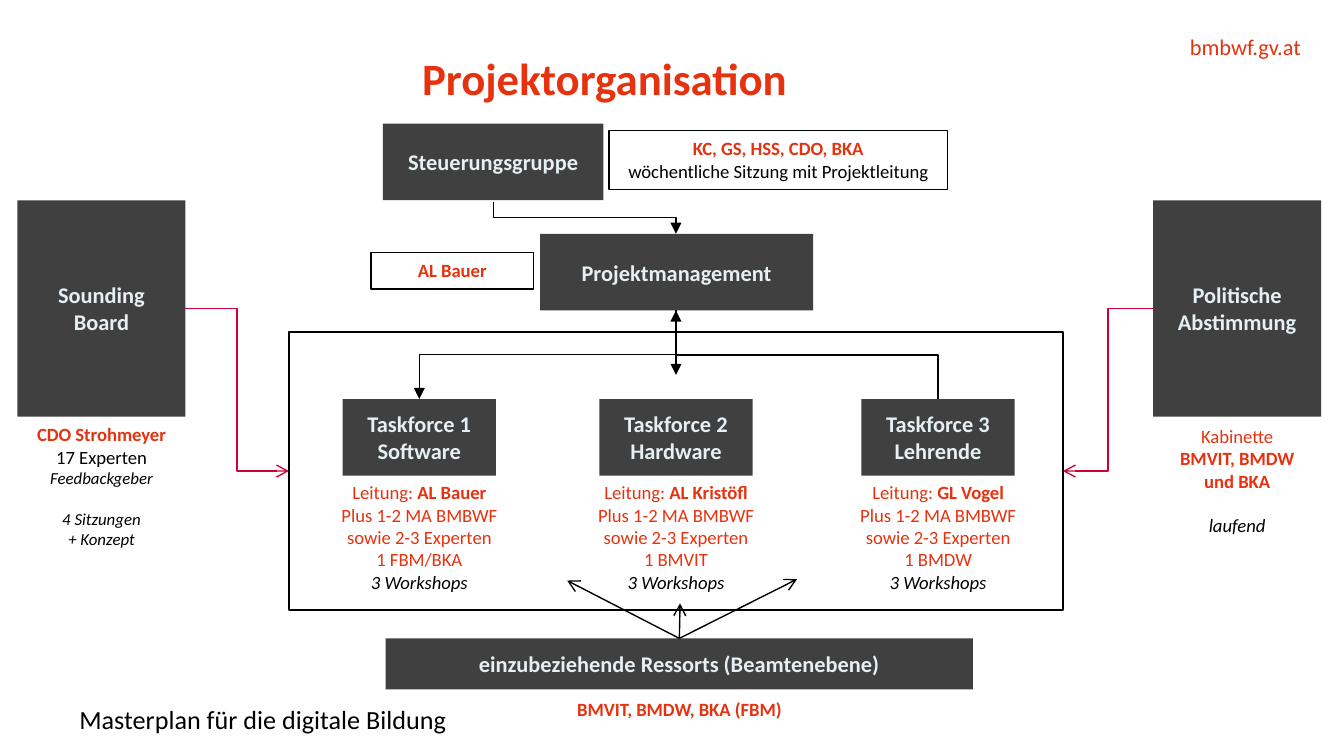
from lxml.etree import SubElement
from pptx import Presentation
from pptx.dml.color import RGBColor
from pptx.enum.shapes import MSO_CONNECTOR, MSO_SHAPE
from pptx.enum.text import MSO_ANCHOR, PP_ALIGN
from pptx.oxml.ns import qn
from pptx.util import Inches, Pt

HUES = {"red": "E6320F", "dark": "404040", "pale": "E6EFF3",
        "black": "000000", "wine": "CA0237"}

# Text styles: colour name and font values
STYLES = {
    "site": ("red", {"size": Pt(12)}),
    "title": ("red", {"size": Pt(24), "bold": True}),
    "foot": ("black", {"size": Pt(14)}),
    "box": ("pale", {"size": Pt(12), "bold": True}),
    "red": ("red", {"size": Pt(10)}),
    "bold": ("red", {"size": Pt(10), "bold": True}),
    "plain": ("black", {"size": Pt(10)}),
    "slant": ("black", {"size": Pt(10), "italic": True}),
    "small": ("black", {"size": Pt(9), "italic": True}),
}

# Content: a line is a list of (text, style) runs; a third value is space before
BOXES = {
    "steer": ((2.85, 0.92, 1.64, 0.57), ["Steuerungsgruppe"]),
    "manage": ((4.02, 1.74, 2.03, 0.57), ["Projektmanagement"]),
    "sound": ((0.13, 1.49, 1.25, 1.61), ["Sounding Board"]),
    "policy": ((8.58, 1.49, 1.25, 1.61), ["Politische Abstimmung"]),
    "depts": ((2.87, 4.75, 4.37, 0.38),
              ["einzubeziehende Ressorts (Beamtenebene)"]),
}
FRAMED = [
    ((2.76, 1.88, 1.21, 0.27), [[("AL Bauer", "bold")]]),
    ((4.53, 0.97, 2.52, 0.44), [
        [("KC, GS, HSS, CDO, BKA", "bold")],
        [("wöchentliche Sitzung mit Projektleitung", "plain")]]),
]
NOTES = [
    ((0.13, 3.1, 1.25, 1.06), [
        [("CDO Strohmeyer", "bold")], [("17 Experten", "plain")],
        [("Feedbackgeber", "small")], [("4 Sitzungen", "small", 11)],
        [("+ Konzept", "small")]]),
    ((8.58, 3.11, 1.25, 0.94), [
        [("Kabinette", "red")], [("BMVIT, BMDW und BKA", "bold")],
        [("laufend", "slant", 12)]]),
    ((2.87, 5.14, 4.37, 0.27), [[("BMVIT, BMDW, BKA (FBM)", "bold")]]),
]
TASKS = [  # centre, topic, lead, partner
    (3.12, "Software", "AL Bauer", "1 FBM/BKA"),
    (5.03, "Hardware", "AL Kristöfl", "1 BMVIT"),
    (6.98, "Lehrende", "GL Vogel", "1 BMDW"),
]
FRAME = (2.15, 2.47, 5.76, 2.07)
TASK_W, TASK_H, TASK_Y, NOTE_W = 1.14, 0.57, 2.97, 1.4
MID = 5.03
BENDS = [  # from, to
    ((3.67, 1.5), (MID, 1.74)),
    ((MID, 2.46), (MID, 2.79)),
    ((MID, 2.31), (3.12, TASK_Y)),
    ((6.98, TASK_Y), (MID, 2.31)),
]
RAYS = [(4.22, 4.32), (5.06, 4.49), (5.93, 4.31)]

# Slide in 16:9
deck = Presentation()
deck.slide_width = Inches(10)
deck.slide_height = Inches(10 * 9 / 16)
slide = deck.slides.add_slide(deck.slide_layouts[6])
shapes = slide.shapes


def hue(name):
    return RGBColor.from_string(HUES[name])


def write(shape, lines, align=PP_ALIGN.CENTER, anchor=MSO_ANCHOR.TOP,
          pad=None, wrap=True):
    frame = shape.text_frame
    frame.word_wrap, frame.vertical_anchor = wrap, anchor
    if pad is not None:
        for side in ("left", "right", "top", "bottom"):
            setattr(frame, f"margin_{side}", Inches(pad))
    for n, line in enumerate(lines):
        para = frame.add_paragraph() if n else frame.paragraphs[0]
        para.alignment = align
        for text, style, *gap in line:
            run = para.add_run()
            run.text = text
            tone, form = STYLES[style]
            for key, value in {"name": "Calibri", **form}.items():
                setattr(run.font, key, value)
            run.font.color.rgb = hue(tone)
            if gap:
                para.space_before = Pt(gap[0])
    return frame


def label(at, lines, **form):
    return write(shapes.add_textbox(*map(Inches, at)), lines, **form)


def block(at, fill=None, width=0.75):
    shape = shapes.add_shape(MSO_SHAPE.RECTANGLE, *map(Inches, at))
    shape.shadow.inherit = False
    if fill:
        shape.fill.solid()
        shape.fill.fore_color.rgb = hue(fill)
        shape.line.fill.background()
    else:
        shape.fill.background()
        shape.line.color.rgb = hue("black")
        shape.line.width = Pt(width)
    return shape


def dark(at, lines):
    shape = block(at, "dark")
    write(shape, [[(text, "box")] for text in lines], anchor=MSO_ANCHOR.MIDDLE)
    return shape


def arrow(kind, start, end, tone="black", head="arrow"):
    line = shapes.add_connector(kind, *map(Inches, (*start, *end)))
    line.line.color.rgb = hue(tone)
    line.line.width = Pt(0.75)
    SubElement(line.line._get_or_add_ln(), qn("a:tailEnd"), type=head)
    SubElement(line._element.spPr, qn("a:effectLst"))
    return line


def drop(start, end):
    """Elbow that leaves vertically: lay it flat, then turn it by 90 degrees."""
    (x1, y1), (x2, y2) = start, end
    cx, cy, dx, dy = (x1 + x2) / 2, (y1 + y2) / 2, x2 - x1, y2 - y1
    line = arrow(MSO_CONNECTOR.ELBOW, (cx - dy / 2, cy + dx / 2),
                 (cx + dy / 2, cy - dx / 2), head="triangle")
    line._element.spPr.find(qn("a:xfrm")).set("rot", str(90 * 60000))


# Header and footer
label((7.27, 0.25, 2.41, 0.2), [[("bmbwf.gv.at", "site")]],
      align=PP_ALIGN.RIGHT, pad=0)
title = label((3.14, 0.36, 5.51, 0.44), [[("Projektorganisation", "title")]],
              align=PP_ALIGN.LEFT, pad=0, wrap=False)
title.paragraphs[0].line_spacing = Pt(30)
label((0.59, 5.24, 7.52, 0.22),
      [[("Masterplan für die digitale Bildung", "foot")]],
      align=PP_ALIGN.LEFT, anchor=MSO_ANCHOR.MIDDLE, pad=0)

# Boxes and notes
frame = block(FRAME, width=1)
parts = {name: dark(at, lines) for name, (at, lines) in BOXES.items()}
for at, lines in FRAMED:
    write(block(at), lines)
for at, lines in NOTES:
    label(at, lines)

# Task forces
for n, (mid, topic, lead, partner) in enumerate(TASKS, 1):
    dark((mid - TASK_W / 2, TASK_Y, TASK_W, TASK_H), [f"Taskforce {n}", topic])
    label((mid - NOTE_W / 2, TASK_Y + TASK_H - 0.01, NOTE_W, 0.94), [
        [("Leitung: ", "red"), (lead, "bold")],
        [("Plus 1-2 MA BMBWF sowie 2-3 Experten", "red")],
        [(partner, "red")], [("3 Workshops", "slant")]])

# Arrows
for start, end in BENDS:
    drop(start, end)
for end in RAYS:
    ray = arrow(MSO_CONNECTOR.STRAIGHT, (5.06, 4.75), end)
    ray.begin_connect(parts["depts"], 0)
for name, out, into, start, end in (
        ("sound", 3, 1, (1.38, 2.29), (2.15, 3.5)),
        ("policy", 1, 3, (8.58, 2.29), (7.91, 3.5))):
    link = arrow(MSO_CONNECTOR.ELBOW, start, end, "wine")
    link.begin_connect(parts[name], out)
    link.end_connect(frame, into)

deck.save("out.pptx")
